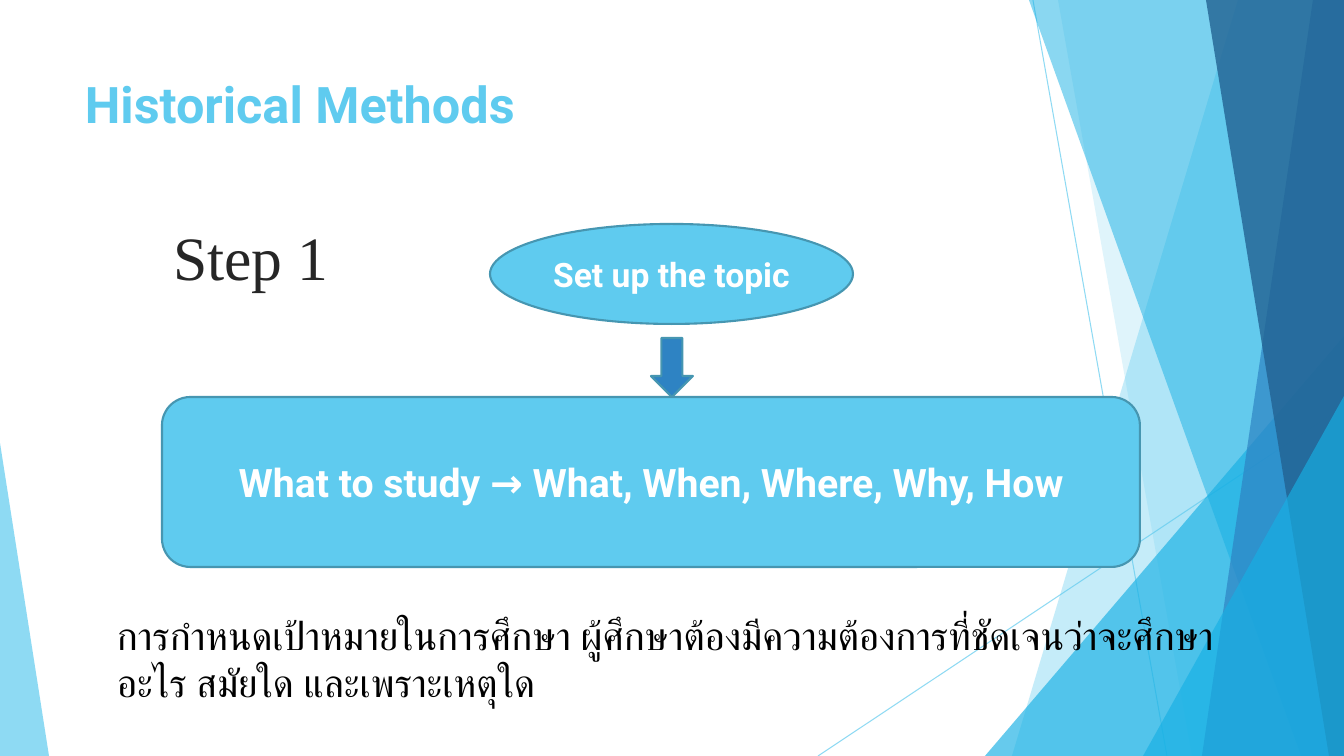
from lxml.etree import SubElement
from pptx import Presentation
from pptx.dml.color import RGBColor
from pptx.enum.shapes import MSO_CONNECTOR, MSO_SHAPE as Preset
from pptx.enum.text import MSO_ANCHOR as Anchor, PP_ALIGN as Align
from pptx.oxml.ns import qn
from pptx.util import Pt

PX = 914400 / 100.8
WIDTH, HEIGHT = 1344, 756
COLORS = {
    "sky": "5FCBEF", "cyan": "17B0E4", "blue": "2E83C3", "navy": "226292",
    "outline": "4696B1", "white": "FFFFFF", "ink": "262626", "black": "000000",
}


def px(*lengths):
    return [round(length * PX) for length in lengths]


def rgb(name):
    return RGBColor.from_string(COLORS[name])


def fade(color_format, color, opacity):
    color_format.solid()
    color_format.fore_color.rgb = rgb(color)
    if opacity < 100:
        srgb = color_format._xPr.find(qn("a:solidFill")).find(qn("a:srgbClr"))
        SubElement(srgb, qn("a:alpha")).set("val", str(opacity * 1000))


def ray(slide, start, end):
    line = slide.shapes.add_connector(MSO_CONNECTOR.STRAIGHT, *px(*start, *end))
    fade(line.line.fill, "sky", 70)
    line.line.width = Pt(0.75)
    SubElement(line._element.spPr, qn("a:effectLst"))


def facet(slide, box, top_left, bottom_left, color, opacity):
    left, top, width, height = box
    right, bottom = left + width, top + height
    outline = slide.shapes.build_freeform(left + top_left, top, scale=PX)
    outline.add_line_segments(
        [(right, top), (right, bottom), (left + bottom_left, bottom)])
    pane = outline.convert_to_shape()
    pane.shadow.inherit = False
    fade(pane.fill, color, opacity)
    pane.line.fill.background()


def wedge(slide, box, apex, color, opacity):
    triangle = slide.shapes.add_shape(Preset.ISOSCELES_TRIANGLE, *px(*box))
    triangle.adjustments[0] = apex
    triangle.shadow.inherit = False
    fade(triangle.fill, color, opacity)
    triangle.line.fill.background()


def write(shape, words, size, color, font="Roboto", bold=False,
          align=Align.LEFT, anchor=Anchor.TOP):
    frame = shape.text_frame
    for name, value in {"word_wrap": True, "vertical_anchor": anchor}.items():
        setattr(frame, name, value)
    paragraph = frame.paragraphs[0]
    paragraph.alignment = align
    run = paragraph.add_run()
    run.text = words
    look = {"size": Pt(size), "name": font, "bold": bold}
    for name, value in look.items():
        setattr(run.font, name, value)
    run.font.color.rgb = rgb(color)


def label(slide, box, words, size, color, **look):
    write(slide.shapes.add_textbox(*px(*box)), words, size, color, **look)


def node(slide, preset, box, fill, words="", size=24):
    shape = slide.shapes.add_shape(preset, *px(*box))
    shape.shadow.inherit = False
    fade(shape.fill, fill, 100)
    shape.line.color.rgb = rgb("outline")
    shape.line.width = Pt(1.5)
    if words:
        write(shape, words, size, "white", bold=True,
              align=Align.CENTER, anchor=Anchor.MIDDLE)


def backdrop(slide, box):
    left, top, width, height = box
    right, bottom = left + width, top + height
    ray(slide, (left + 1033, top), (left + 1167, bottom))
    ray(slide, (right, top + 406), (left + 818, bottom))
    facet(slide, box, 1238, 1012, "sky", 36)
    facet(slide, box, 1058, 1192, "sky", 20)
    wedge(slide, (right - 359, bottom - 420, 359, 420), 1, "cyan", 66)
    facet(slide, box, 1029, 1301, "cyan", 50)
    facet(slide, box, 1313, 1202, "blue", 70)
    facet(slide, box, 1206, 1329, "navy", 80)
    wedge(slide, (right - 201, bottom - 360, 201, 360), 1, "cyan", 66)
    wedge(slide, (left, bottom - 313, 49, 313), 0, "sky", 70)


def step_diagram(slide, box):
    left, top, width, height = box
    node(slide, Preset.OVAL, (left + 328, top, 363, 100), "sky",
         "Set up the topic")
    node(slide, Preset.DOWN_ARROW, (left + 489, top + 114, 42, 59), "blue")
    node(slide, Preset.ROUNDED_RECTANGLE,
         (left, top + height - 170, width, 170), "sky",
         "What to study → What, When, Where, Why, How", 28)
    label(slide, (left - 68, top - 14, 314, 91), "Step 1", 44, "ink",
          font="Times New Roman", align=Align.CENTER, anchor=Anchor.MIDDLE)


def main():
    deck = Presentation()
    deck.slide_width, deck.slide_height = px(WIDTH, HEIGHT)
    slide = deck.slides.add_slide(deck.slide_layouts[6])
    backdrop(slide, (0, 0, WIDTH, HEIGHT))
    label(slide, (75, 68, 948, 145), "Historical Methods", 36, "sky", bold=True)
    step_diagram(slide, (162, 224, 978, 343))
    label(slide, (107, 606, 1130, 57),
          "การกำหนดเป้าหมายในการศึกษา ผู้ศึกษาต้องมีความต้องการที่ชัดเจน"
          "ว่าจะศึกษาอะไร สมัยใด และเพราะเหตุใด", 28, "black")
    deck.save("out.pptx")


if __name__ == "__main__":
    main()
